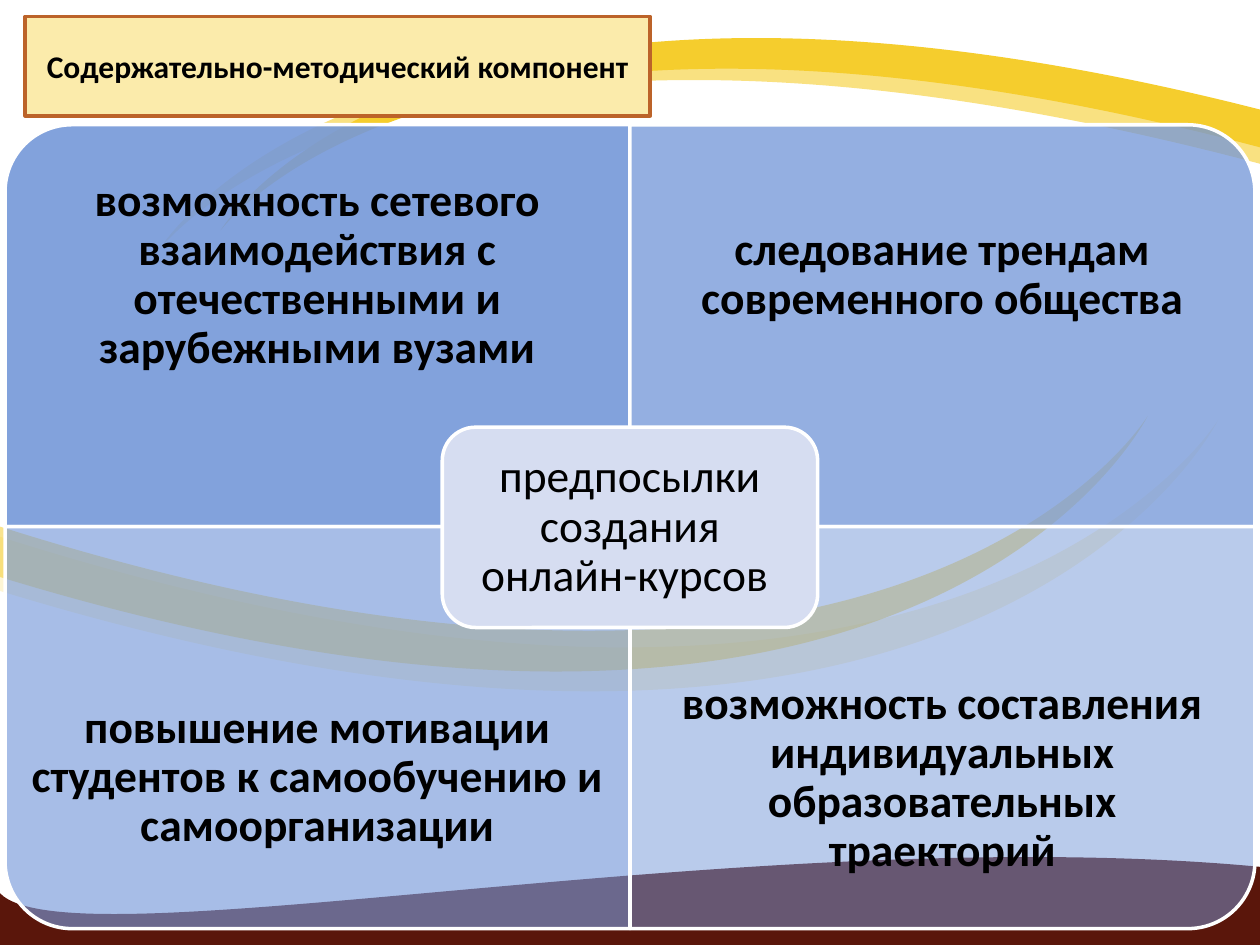
from lxml import etree
from pptx import Presentation
from pptx.dml.color import RGBColor
from pptx.enum.shapes import MSO_SHAPE
from pptx.enum.text import MSO_ANCHOR, MSO_AUTO_SIZE, PP_ALIGN
from pptx.oxml.ns import qn
from pptx.util import Inches, Pt

ROUND_ONE = MSO_SHAPE.ROUND_1_RECTANGLE
ROUNDED = MSO_SHAPE.ROUNDED_RECTANGLE
CENTER = PP_ALIGN.CENTER
MIDDLE = MSO_ANCHOR.MIDDLE
NO_AUTOFIT = MSO_AUTO_SIZE.NONE

FONT = "Calibri"
BLUE, WHITE, BLACK = "7598D9", "FFFFFF", "000000"

GRID_LEFT, GRID_TOP = 0.04, 0.99
CELL_W, CELL_H = 4.96, 3.19
TEXT_H = 2.39

# Each wave: colour, opacity in percent, start point, then cubic curves
# (three points each) and straight lines (one point each).
WAVES = [
    ("5A160B", 100, (0, 7.09),
     [[(0.56, 7.67), (5.96, 6.5), (10, 6.88)], [(10.01, 7.54)], [(0, 7.51)]]),
    ("FDF5D5", 100, (0, 4.26),
     [[(7.63, 6.68), (9.67, 3.33), (9.67, 3.33)],
      [(9.67, 3.33), (7.82, 7.08), (0, 4.69)]]),
    ("F9E181", 100, (10, 1.3),
     [[(3.09, -0.53), (1.25, 2), (1.25, 2)],
      [(1.25, 2), (2.92, -0.83), (10, 0.97)]]),
    ("F5CD2D", 100, (10, 1.17),
     [[(3.49, -0.55), (1.75, 1.83), (1.75, 1.83)],
      [(1.75, 1.83), (3.33, -0.83), (10, 0.87)]]),
    ("F5CD2D", 54, (0, 4.18),
     [[(7.2, 6.46), (9.11, 3.3), (9.11, 3.3)],
      [(9.11, 3.3), (7.37, 6.83), (0, 4.58)]]),
]

# Column, row, rotation, opacity in percent, text
QUADRANTS = [
    (0, 0, 270, 90, "возможность сетевого взаимодействия с отечественными и зарубежными вузами"),
    (1, 0, 0, 77, "следование трендам современного общества"),
    (0, 1, 180, 63, "повышение мотивации студентов к самообучению и самоорганизации"),
    (1, 1, 90, 50, "возможность составления индивидуальных образовательных траекторий"),
]


def rgb(color):
    return RGBColor.from_string(color)


def paint(shape, color, opacity=100, line=None):
    shape.fill.solid()
    shape.fill.fore_color.rgb = rgb(color)
    if opacity < 100:
        fill_color = shape.fill._xPr.find(qn("a:solidFill"))[0]
        etree.SubElement(fill_color, qn("a:alpha"), val=str(opacity * 1000))
    if line:
        shape.line.color.rgb = rgb(line)
        shape.line.width = Pt(2)
    else:
        shape.line.fill.background()


def write(shape, text, size, bold=False, inset=0.1, line_spacing=None):
    frame = shape.text_frame
    frame.word_wrap = True
    frame.auto_size = NO_AUTOFIT
    frame.vertical_anchor = MIDDLE
    frame.margin_left = frame.margin_right = Inches(inset)
    frame.margin_top = frame.margin_bottom = Inches(inset if line_spacing else 0.05)
    paragraph = frame.paragraphs[0]
    paragraph.alignment = CENTER
    paragraph.line_spacing = line_spacing
    run = paragraph.add_run()
    run.text = text
    run.font.name = FONT
    run.font.size = Pt(size)
    run.font.bold = bold
    run.font.color.rgb = rgb(BLACK)


def bend_lines(freeform, segments):
    """Join each three-point segment of the outline into one cubic curve."""
    lines = iter(list(freeform._element.iter(qn("a:lnTo"))))
    for segment in segments:
        first, *others = [next(lines) for _ in segment]
        if others:
            curve = etree.Element(qn("a:cubicBezTo"))
            first.addprevious(curve)
            for line in (first, *others):
                curve.append(line[0])
                line.getparent().remove(line)


def add_wave(slide, color, opacity, start, segments):
    builder = slide.shapes.build_freeform(Inches(start[0]), Inches(start[1]))
    builder.add_line_segments(
        [(Inches(x), Inches(y)) for segment in segments for x, y in segment],
        close=True)
    wave = builder.convert_to_shape()
    bend_lines(wave, segments)
    wave.shadow.inherit = False
    paint(wave, color, opacity)


def add_quadrant(slide, column, row, rotation, opacity, text):
    left = GRID_LEFT + column * CELL_W
    top = GRID_TOP + row * CELL_H
    # A quarter turn swaps width and height around the same centre.
    width, height = (CELL_H, CELL_W) if rotation % 180 else (CELL_W, CELL_H)
    cell = slide.shapes.add_shape(
        ROUND_ONE,
        Inches(left + (CELL_W - width) / 2), Inches(top + (CELL_H - height) / 2),
        Inches(width), Inches(height))
    cell.rotation = rotation
    cell.shadow.inherit = False
    paint(cell, BLUE, opacity, WHITE)

    text_top = top + row * (CELL_H - TEXT_H)
    label = slide.shapes.add_textbox(
        Inches(left), Inches(text_top), Inches(CELL_W), Inches(TEXT_H))
    write(label, text, 26, bold=True, inset=0.2, line_spacing=0.9)


def add_center(slide, text):
    center = slide.shapes.add_shape(
        ROUNDED, Inches(3.51), Inches(3.39), Inches(2.98), Inches(1.59))
    center.shadow.inherit = False
    paint(center, "D6DDF1", line=WHITE)
    write(center, text, 26, inset=0.11, line_spacing=0.9)


def set_title(slide, text):
    title = slide.shapes.title
    title.left, title.top = Inches(0.2), Inches(0.13)
    title.width, title.height = Inches(4.96), Inches(0.79)
    paint(title, "FBEBAB", line="BC6329")
    write(title, text, 18, bold=True)
    # The title lies in front of the waves.
    slide.shapes._spTree.append(title._element)


def main():
    deck = Presentation()
    deck.slide_width, deck.slide_height = Inches(10), Inches(7.5)
    slide = deck.slides.add_slide(deck.slide_layouts[5])
    for wave in WAVES:
        add_wave(slide, *wave)
    for quadrant in QUADRANTS:
        add_quadrant(slide, *quadrant)
    add_center(slide, "предпосылки создания онлайн-курсов ")
    set_title(slide, "Содержательно-методический компонент")
    deck.save("out.pptx")


if __name__ == "__main__":
    main()
